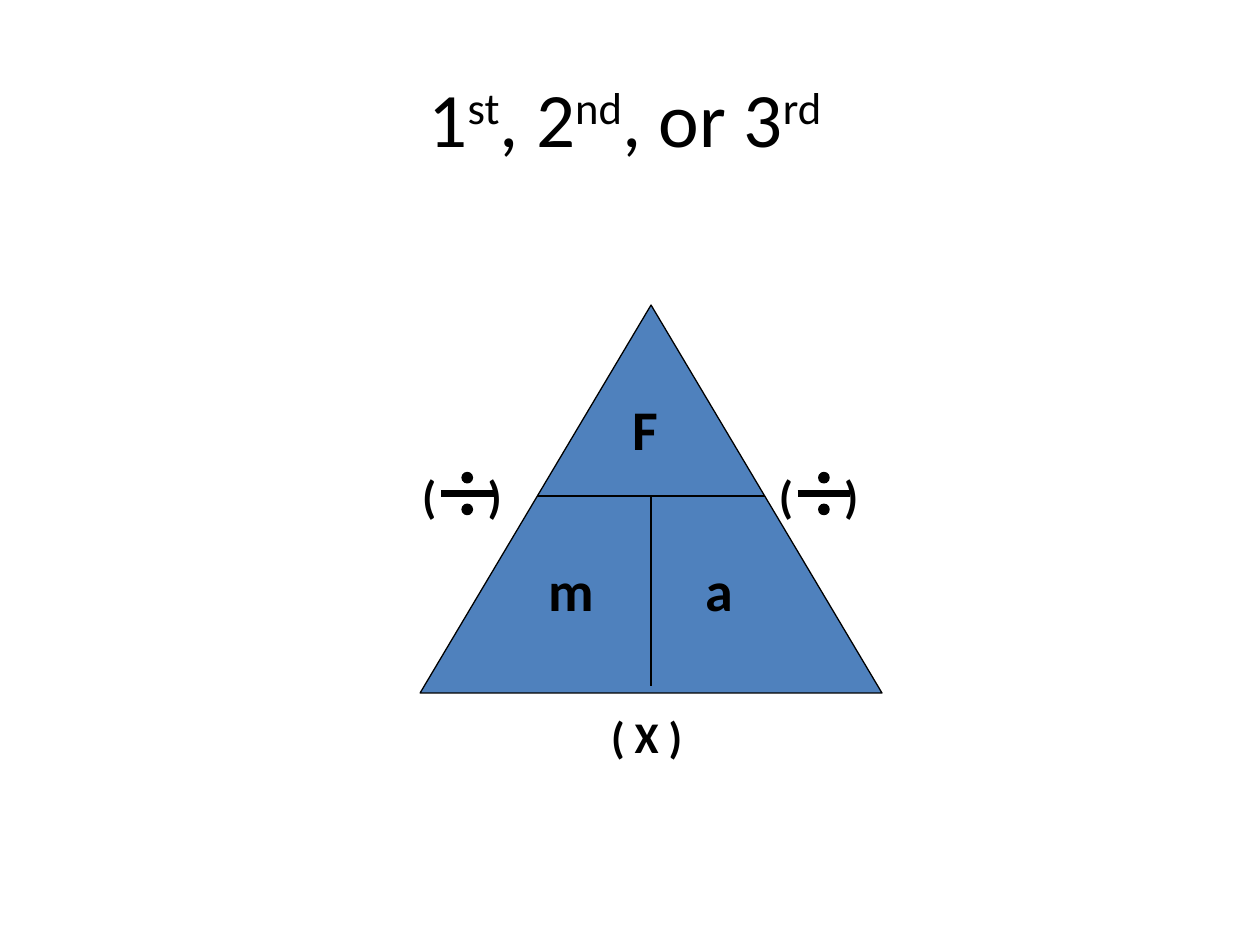
"""Build a slide with the force, mass and acceleration formula triangle."""
from lxml.etree import SubElement
from pptx import Presentation
from pptx.dml.color import RGBColor
from pptx.enum.shapes import MSO_CONNECTOR, MSO_SHAPE
from pptx.enum.text import MSO_ANCHOR, PP_ALIGN
from pptx.oxml.ns import qn
from pptx.util import Cm, Pt

THEME = {
    "font": "Calibri",
    "ink": RGBColor(0x00, 0x00, 0x00),
    "fill": RGBColor(0x4F, 0x81, 0xBD),
    "title": 44,
    "letter": 32,
    "bracket": 26,
    "operator": 25,
    "thin": 0.75,
    "thick": 4.5,
}
TITLE_BOX = (1.27, 0.76, 22.86, 3.18)
TITLE = [("1", "st"), (", 2", "nd"), (", or 3", "rd ")]
TRIANGLE = (8.47, 6.15, 9.31, 7.82)
ROW_Y, STEM_END = 10.0, 13.82
LABELS = [
    ("F", "letter", (12.5, 7.83, 1.2, 1.6)),
    ("m", "letter", (10.8, 11.07, 1.53, 1.6)),
    ("a", "letter", (13.97, 11.07, 1.15, 1.6)),
    ("( X )", "operator", (12.07, 14.18, 2.33, 1.32)),
]
DIVISION_LEFTS = (8.89, 16.08)
DIVISION_Y, BAR_WIDTH, DOT_SIZE, DOT_OFFSET = 9.95, 1.06, 0.21, 0.32
BRACKET_SHIFT, BRACKET_TOP, BRACKET_TAB = 0.63, 9.32, 1.32


def lengths(values):
    return [Cm(value) for value in values]


def style_run(run, size, bold=False):
    font_format = {"name": THEME["font"], "size": Pt(THEME[size]), "bold": bold}
    for attribute, value in font_format.items():
        setattr(run.font, attribute, value)
    run.font.color.rgb = THEME["ink"]


def style_line(line, weight="thin"):
    line.color.rgb = THEME["ink"]
    line.width = Pt(THEME[weight])


def add_title(slide):
    title = slide.shapes.title
    for attribute, value in zip(("left", "top", "width", "height"), lengths(TITLE_BOX)):
        setattr(title, attribute, value)
    title.text_frame.vertical_anchor = MSO_ANCHOR.MIDDLE
    paragraph = title.text_frame.paragraphs[0]
    paragraph.alignment = PP_ALIGN.CENTER
    for base, suffix in TITLE:
        for text, baseline in ((base, "0"), (suffix, "30000")):
            run = paragraph.add_run()
            run.text = text
            style_run(run, "title")
            run._r.get_or_add_rPr().set("baseline", baseline)


def add_shape(shapes, kind, box, fill):
    shape = shapes.add_shape(kind, *lengths(box))
    shape.shadow.inherit = False
    shape.fill.solid()
    shape.fill.fore_color.rgb = THEME[fill]
    style_line(shape.line)


def add_line(shapes, points, weight="thin"):
    connector = shapes.add_connector(MSO_CONNECTOR.STRAIGHT, *lengths(points))
    style_line(connector.line, weight)
    SubElement(connector._element.spPr, qn("a:effectLst"))


def add_label(shapes, text, size, box):
    text_box = shapes.add_textbox(*lengths(box))
    text_box.text_frame.word_wrap = True
    paragraph = text_box.text_frame.paragraphs[0]
    run = paragraph.add_run()
    run.text = text
    style_run(run, size, bold=True)
    return paragraph


def add_triangle(shapes):
    left, top, width, height = TRIANGLE
    center = left + width / 2
    half_row = width / 2 * (ROW_Y - top) / height
    add_shape(shapes, MSO_SHAPE.ISOSCELES_TRIANGLE, TRIANGLE, "fill")
    add_line(shapes, (center - half_row, ROW_Y, center + half_row, ROW_Y))
    add_line(shapes, (center, STEM_END, center, ROW_Y))


def add_division(shapes, left):
    dot_left = left + (BAR_WIDTH - DOT_SIZE) / 2
    for offset in (-DOT_OFFSET, DOT_OFFSET):
        dot_top = DIVISION_Y + offset - DOT_SIZE / 2
        add_shape(shapes, MSO_SHAPE.OVAL, (dot_left, dot_top, DOT_SIZE, DOT_SIZE), "ink")
    add_line(shapes, (left, DIVISION_Y, left + BAR_WIDTH, DIVISION_Y), "thick")
    box = (left - BRACKET_SHIFT, BRACKET_TOP, 2.4, 1.35)
    paragraph = add_label(shapes, "(\t)", "bracket", box)
    tabs = SubElement(paragraph._p.get_or_add_pPr(), qn("a:tabLst"))
    SubElement(tabs, qn("a:tab"), pos=str(Cm(BRACKET_TAB)), algn="l")


def main():
    presentation = Presentation()
    presentation.slide_width, presentation.slide_height = Cm(25.4), Cm(19.05)
    slide = presentation.slides.add_slide(presentation.slide_layouts[5])
    add_title(slide)
    shapes = slide.shapes.add_group_shape().shapes
    add_triangle(shapes)
    for label in LABELS:
        add_label(shapes, *label)
    for left in DIVISION_LEFTS:
        add_division(shapes, left)
    presentation.save("out.pptx")


if __name__ == "__main__":
    main()
